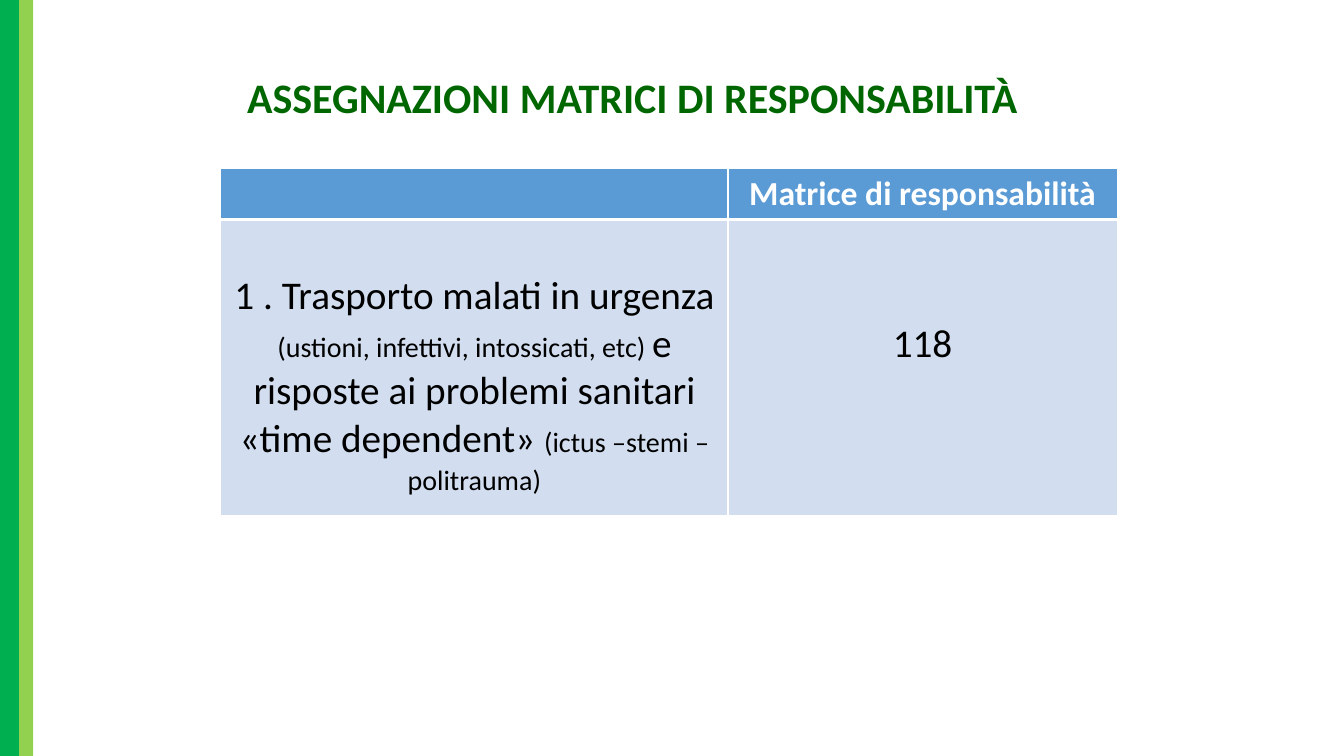
"""Build the slide that assigns the responsibility matrices."""
from dataclasses import dataclass

from lxml import etree
from pptx import Presentation
from pptx import util as u
from pptx.dml import color
from pptx.enum import shapes, text
from pptx.oxml import ns

COLUMNS, ROWS = 133.3, 75


@dataclass(frozen=True)
class Theme:
    font: str = "Calibri"
    title_size: int = 30
    header_size: int = 24
    body_size: int = 28
    detail_size: int = 20
    dark_band: str = "00B050"
    light_band: str = "92D050"
    title: str = "006600"
    header: str = "5B9BD5"
    body: str = "D2DEEF"
    ink: str = "000000"
    white: str = "FFFFFF"


@dataclass(frozen=True)
class Band:
    column: float
    width: float
    fill: str


@dataclass(frozen=True)
class Span:
    words: str
    size: int
    ink: str
    bold: bool = False


@dataclass(frozen=True)
class Cell:
    row: int
    column: int
    fill: str
    spans: tuple[Span, ...] = ()
    top_margin: float = 0.5
    bottom_line: float = 1


THEME = Theme()
BANDS = (Band(0, 1.9, THEME.dark_band), Band(1.9, 1.4, THEME.light_band))
TITLE = Span("ASSEGNAZIONI MATRICI DI RESPONSABILITÀ", THEME.title_size, THEME.title, True)
TABLE_COLUMNS = (50.3, 38.6)
TABLE_ROWS = (5, 29.4)
CELLS = (
    Cell(0, 0, THEME.header, bottom_line=3),
    Cell(0, 1, THEME.header,
         (Span("Matrice di responsabilità", THEME.header_size, THEME.white, True),),
         bottom_line=3),
    Cell(1, 0, THEME.body, (
        Span("1 . Trasporto malati in urgenza ", THEME.body_size, THEME.ink),
        Span("(ustioni, infettivi, intossicati, etc) ", THEME.detail_size, THEME.ink),
        Span("e risposte ai problemi sanitari «time dependent» ", THEME.body_size, THEME.ink),
        Span("(ictus –stemi – politrauma)", THEME.detail_size, THEME.ink),
    ), top_margin=5.2),
    Cell(1, 1, THEME.body, (Span("118", THEME.body_size, THEME.ink),), top_margin=10),
)


def across(deck, columns: float) -> int:
    return round(deck.slide_width * columns / COLUMNS)


def down(deck, rows: float) -> int:
    return round(deck.slide_height * rows / ROWS)


def rgb(value: str) -> color.RGBColor:
    return color.RGBColor.from_string(value)


def write_spans(para, spans: tuple[Span, ...]) -> None:
    para.alignment = text.PP_ALIGN.CENTER
    for span in spans:
        run = para.add_run()
        run.text = span.words
        run.font.name = THEME.font
        run.font.size = u.Pt(span.size)
        run.font.bold = span.bold
        run.font.color.rgb = rgb(span.ink)


def draw_band(deck, page, band: Band) -> None:
    shape = page.shapes.add_shape(
        shapes.MSO_SHAPE.RECTANGLE, across(deck, band.column), 0,
        across(deck, band.width), deck.slide_height)
    shape.shadow.inherit = False
    shape.fill.solid()
    shape.fill.fore_color.rgb = rgb(band.fill)
    shape.line.fill.background()


def draw_borders(cell, bottom_line: float) -> None:
    properties = cell._tc.get_or_add_tcPr()
    for index, side in enumerate("LRTB"):
        width = bottom_line if side == "B" else 1
        line = etree.Element(ns.qn(f"a:ln{side}"), w=str(u.Pt(width)))
        fill = etree.SubElement(line, ns.qn("a:solidFill"))
        etree.SubElement(fill, ns.qn("a:srgbClr"), val=THEME.white)
        properties.insert(index, line)


def draw_cell(deck, table, item: Cell) -> None:
    cell = table.cell(item.row, item.column)
    cell.fill.solid()
    cell.fill.fore_color.rgb = rgb(item.fill)
    cell.margin_top = down(deck, item.top_margin)
    write_spans(cell.text_frame.paragraphs[0], item.spans)
    draw_borders(cell, item.bottom_line)


def draw_table(deck, page) -> None:
    frame = page.shapes.add_table(
        len(TABLE_ROWS), len(TABLE_COLUMNS), across(deck, 21.9), down(deck, 16.7),
        across(deck, sum(TABLE_COLUMNS)), down(deck, sum(TABLE_ROWS)))
    table = frame.table
    table.horz_banding = False
    for column, width in zip(table.columns, TABLE_COLUMNS):
        column.width = across(deck, width)
    for row, height in zip(table.rows, TABLE_ROWS):
        row.height = down(deck, height)
    for item in CELLS:
        draw_cell(deck, table, item)


def draw_title(deck, page) -> None:
    box = page.shapes.add_textbox(
        across(deck, 14.7), down(deck, 6.6), across(deck, 96.1), down(deck, 6.1))
    box.text_frame.word_wrap = True
    box.text_frame.auto_size = text.MSO_AUTO_SIZE.SHAPE_TO_FIT_TEXT
    write_spans(box.text_frame.paragraphs[0], (TITLE,))


def main() -> None:
    deck = Presentation()
    deck.slide_width, deck.slide_height = u.Inches(13.33), u.Inches(7.5)
    page = deck.slides.add_slide(deck.slide_layouts[6])
    for band in BANDS:
        draw_band(deck, page, band)
    draw_table(deck, page)
    draw_title(deck, page)
    deck.save("out.pptx")


if __name__ == "__main__":
    main()
